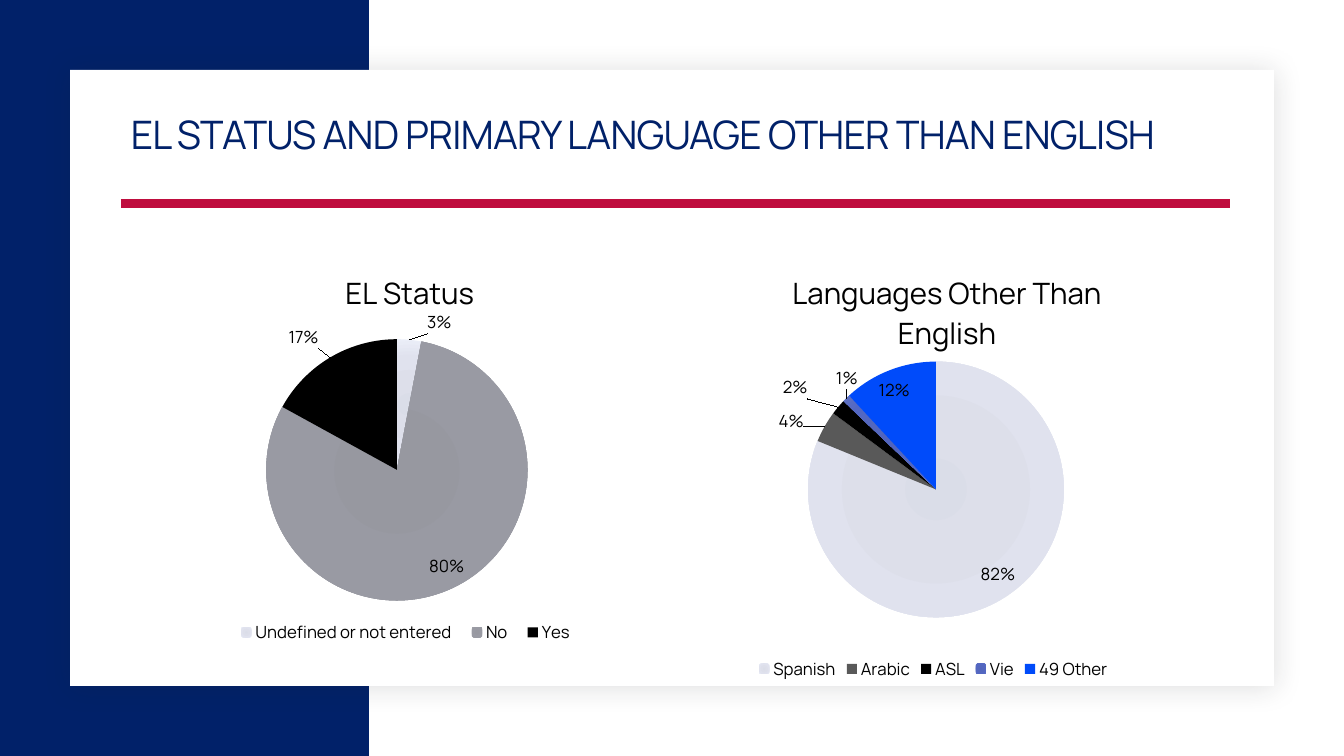
from dataclasses import dataclass
from typing import Optional

from lxml.etree import SubElement
from pptx import Presentation
from pptx.chart.data import CategoryChartData
from pptx.dml.color import RGBColor
from pptx.enum.chart import XL_CHART_TYPE, XL_LABEL_POSITION, XL_LEGEND_POSITION
from pptx.enum.shapes import MSO_CONNECTOR, MSO_SHAPE
from pptx.enum.text import MSO_ANCHOR
from pptx.oxml import parse_xml
from pptx.oxml.ns import nsdecls, qn
from pptx.util import Pt


@dataclass(frozen=True)
class Theme:
    font: str = "Manrope"
    navy: str = "012169"
    red: str = "BF0D3E"
    white: str = "FFFFFF"
    black: str = "000000"
    shadow: str = "1F2125"
    heading_size: float = 28
    chart_title_size: float = 21
    label_size: float = 12


THEME = Theme()
GRADIENT_STOPS = (0, 34, 70, 100)
PALE = ("DADDE8", "DDDFEA", "E0E2EE", "EBEEF8")
GREY = ("95969F", "9798A0", "999AA3", "A1A2A9")
INDIGO = ("5164BD", "5467BD", "5367C2", "6072C2")


@dataclass(frozen=True)
class Box:
    left: float
    top: float
    width: float
    height: float

    def lengths(self) -> tuple:
        return Pt(self.left), Pt(self.top), Pt(self.width), Pt(self.height)


@dataclass(frozen=True)
class Slice:
    """One pie slice; several colours make a gradient, label_shift moves its outside label."""
    name: str
    value: float
    colors: tuple
    label_shift: tuple = ()


@dataclass(frozen=True)
class Pie:
    """A pie chart; title_corner, plot and legend are fractions of the chart's size."""
    title: str
    title_corner: tuple
    box: Box
    plot: Box
    legend: Optional[Box]
    shows_percent: bool
    slices: tuple


PIES = (
    Pie("EL Status", (0.35, 0.02), Box(133.92, 182.88, 311.76, 282.96),
        Box(0.18, 0.21, 0.6, 0.66), Box(0.09, 0.91, 0.82, 0.08), True, (
            Slice("Undefined or not entered", 3, PALE, (0.04, 0)),
            Slice("No", 80, GREY),
            Slice("Yes", 17, (THEME.black,), (-0.02, -0.01)))),
    Pie("Languages Other Than English", (0.22, 0.02), Box(480.24, 182.88, 372.96, 306),
        Box(0.26, 0.23, 0.49, 0.63), None, False, (
            Slice("Spanish", 0.82, PALE),
            Slice("Arabic", 0.04, ("595959",), (-0.03, 0.02)),
            Slice("ASL", 0.02, (THEME.black,), (-0.05, -0.01)),
            Slice("Vie", 0.01, INDIGO, (0.03, -0.01)),
            Slice("49 Other", 0.12, ("004BFA",)))),
)


def style_font(font, size: float, color: str = THEME.black) -> None:
    font.name = THEME.font
    font.size = Pt(size)
    font.bold = False
    font.color.rgb = RGBColor.from_string(color)


def add_panel(slide, box: Box, color: str):
    shape = slide.shapes.add_shape(MSO_SHAPE.RECTANGLE, *box.lengths())
    shape.shadow.inherit = False
    shape.fill.solid()
    shape.fill.fore_color.rgb = RGBColor.from_string(color)
    shape.line.fill.background()
    return shape


def add_soft_shadow(shape) -> None:
    effects = shape._element.spPr.find(qn("a:effectLst"))
    shadow = SubElement(effects, qn("a:outerShdw"), blurRad=str(Pt(20)), dist=str(Pt(2)),
                        dir="2700000", algn="ctr", rotWithShape="0")
    color = SubElement(shadow, qn("a:srgbClr"), val=THEME.shadow)
    SubElement(color, qn("a:alpha"), val="15000")


def add_rule(slide, left: float, right: float, y: float) -> None:
    line = slide.shapes.add_connector(MSO_CONNECTOR.STRAIGHT, Pt(left), Pt(y), Pt(right), Pt(y))
    line.line.color.rgb = RGBColor.from_string(THEME.red)
    line.line.width = Pt(6)
    SubElement(line._element.spPr, qn("a:effectLst"))


def add_heading(slide, text: str, box: Box) -> None:
    text_frame = slide.shapes.add_textbox(*box.lengths()).text_frame
    text_frame.word_wrap = True
    text_frame.vertical_anchor = MSO_ANCHOR.MIDDLE
    text_frame.text = text
    paragraph = text_frame.paragraphs[0]
    paragraph.line_spacing = 0.9
    style_font(paragraph.runs[0].font, THEME.heading_size, THEME.navy)
    paragraph.runs[0].font._element.set("spc", "-50")


def set_layout(element, position: int, values: tuple, modes: tuple = ()) -> None:
    """Place a chart part by x, y and optionally width, height, as its child at position."""
    for layout in element.findall(qn("c:layout")):
        element.remove(layout)
    items = (*modes, *zip("xywh", values))
    children = "".join(f'<c:{name} val="{value}"/>' for name, value in items)
    element.insert(position, parse_xml(
        f'<c:layout {nsdecls("c")}><c:manualLayout>{children}</c:manualLayout></c:layout>'))


def arrange_chart(chart, pie: Pie) -> None:
    edges = (("xMode", "edge"), ("yMode", "edge"))
    plot = pie.plot
    set_layout(chart._chartSpace.chart.plotArea, 0, (plot.left, plot.top, plot.width, plot.height),
               (("layoutTarget", "inner"), *edges))
    set_layout(chart.chart_title._element, 1, pie.title_corner, edges)
    if pie.legend:
        box = pie.legend
        set_layout(chart.legend._element, 1, (box.left, box.top, box.width, box.height), edges)


def fill_slice(series, index: int, colors: tuple) -> None:
    fill = series.points[index].format.fill
    fill.solid()
    fill.fore_color.rgb = RGBColor.from_string(colors[0])
    if len(colors) == 1:
        return
    stops = "".join(f'<a:gs pos="{stop * 1000}"><a:srgbClr val="{color}"/></a:gs>'
                    for stop, color in zip(GRADIENT_STOPS, colors))
    gradient = parse_xml(
        f'<a:gradFill {nsdecls("a")}><a:gsLst>{stops}</a:gsLst><a:path path="circle">'
        '<a:fillToRect l="100000" t="100000" r="100000" b="100000"/></a:path></a:gradFill>')
    solid = series._element.xpath(f'c:dPt[c:idx/@val="{index}"]/c:spPr/a:solidFill')[0]
    solid.getparent().replace(solid, gradient)


def move_label(series, index: int, shift: tuple, shows_percent: bool) -> None:
    label = series.points[index].data_label
    style_font(label.font, THEME.label_size)
    label.position = XL_LABEL_POSITION.OUTSIDE_END
    element = series._element.xpath(f'c:dLbls/c:dLbl[c:idx/@val="{index}"]')[0]
    set_layout(element, 1, shift)
    element.insert(2, parse_xml(f'<c:numFmt {nsdecls("c")} formatCode="0%" sourceLinked="0"/>'))
    element.find(qn("c:showVal")).set("val", str(int(not shows_percent)))
    element.find(qn("c:showPercent")).set("val", str(int(shows_percent)))


def add_pie(slide, pie: Pie) -> None:
    data = CategoryChartData()
    data.categories = [part.name for part in pie.slices]
    data.add_series("Series 1", [part.value for part in pie.slices])
    chart = slide.shapes.add_chart(XL_CHART_TYPE.PIE, *pie.box.lengths(), data).chart
    style_font(chart.font, THEME.label_size)
    title = chart.chart_title.text_frame
    title.text = pie.title
    style_font(title.paragraphs[0].runs[0].font, THEME.chart_title_size)
    chart.has_legend = True
    chart.legend.position = XL_LEGEND_POSITION.BOTTOM
    chart.legend.include_in_layout = False
    style_font(chart.legend.font, THEME.label_size)
    arrange_chart(chart, pie)
    chart.plots[0].vary_by_categories = True
    series = chart.plots[0].series[0]
    labels = series.data_labels
    labels.show_value = not pie.shows_percent
    labels.show_percentage = pie.shows_percent
    labels.number_format = "0%"
    labels.number_format_is_linked = False
    labels.position = XL_LABEL_POSITION.BEST_FIT
    style_font(labels.font, THEME.label_size)
    for index, part in enumerate(pie.slices):
        fill_slice(series, index, part.colors)
        if part.label_shift:
            move_label(series, index, part.label_shift, pie.shows_percent)


def main() -> None:
    presentation = Presentation()
    presentation.slide_width, presentation.slide_height = Pt(960), Pt(540)
    slide = presentation.slides.add_slide(presentation.slide_layouts[6])
    add_panel(slide, Box(0, 0, 263.5, 540), THEME.navy)
    add_soft_shadow(add_panel(slide, Box(50, 50, 860, 440), THEME.white))
    add_rule(slide, 86.4, 878.4, 145.4)
    add_heading(slide, "EL STATUS AND PRIMARY LANGUAGE OTHER THAN ENGLISH", Box(86.4, 74.5, 792, 46))
    for pie in PIES:
        add_pie(slide, pie)
    presentation.save("out.pptx")


if __name__ == "__main__":
    main()
